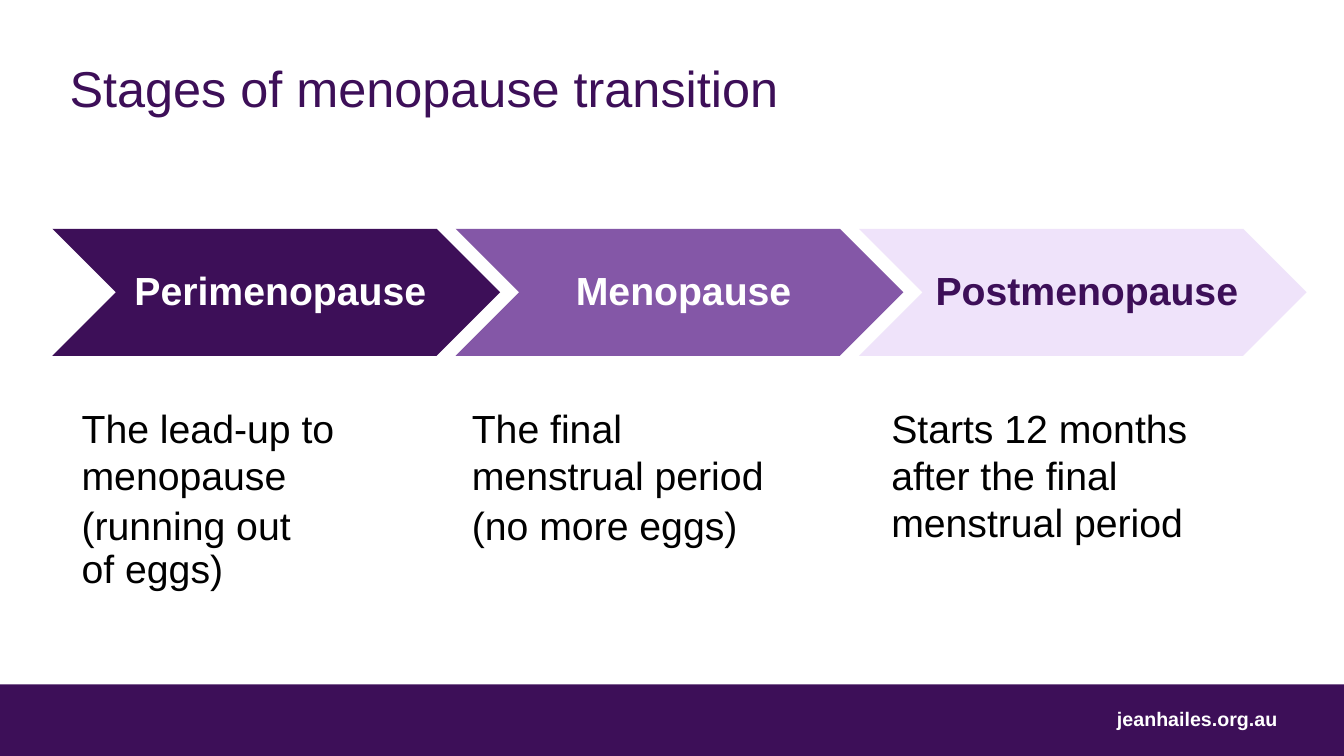
from dataclasses import dataclass

from lxml import etree
from pptx import Presentation, util as u
from pptx.dml.color import RGBColor
from pptx.enum import shapes, text
from pptx.oxml.ns import qn

# Content: each paragraph is a tuple of lines
TITLE = "Stages of menopause transition"
FOOTER = "jeanhailes.org.au"
STAGES = [
    {"name": "Perimenopause", "fill": "3D0F58", "alpha": 100, "ink": "FFFFFF",
     "left": 0.52, "width": 3.97,
     "notes": [("The lead-up to", "menopause"), ("(running out", "of eggs)")]},
    {"name": "Menopause", "fill": "662D91", "alpha": 80, "ink": "FFFFFF",
     "left": 4.39, "width": 3.97,
     "notes": [("The final", "menstrual period"), ("(no more eggs)",)]},
    {"name": "Postmenopause", "fill": "E0C9F6", "alpha": 50, "ink": "3D0F58",
     "left": 8.55, "width": 4.62,
     "notes": [("Starts 12 months", "after the final", "menstrual period")]},
]


@dataclass(frozen=True)
class Theme:
    font: str = "Arial"
    purple: str = "3D0F58"
    white: str = "FFFFFF"
    black: str = "000000"
    title: int = 36
    body: int = 28
    footer: int = 14


THEME = Theme()
WIDTH, HEIGHT = 13.33, 7.5
BAND_TOP = 6.79
CHEVRON_LEFT, CHEVRON_TOP, CHEVRON_STEP = 0.52, 2.27, 4
CHEVRON_WIDTH, CHEVRON_HEIGHT = 4.44, 1.26
NOTES_TOP, NOTES_HEIGHT = 3.97, 3.32


def inches(*values):
    return [u.Inches(value) for value in values]


def set_frame(frame, insets, anchor=text.MSO_ANCHOR.TOP, wrap=True):
    frame.word_wrap = wrap
    frame.auto_size = text.MSO_AUTO_SIZE.NONE
    frame.vertical_anchor = anchor
    (frame.margin_left, frame.margin_top,
     frame.margin_right, frame.margin_bottom) = inches(*insets)


def write(para, lines, size, color, bold=False, align=text.PP_ALIGN.LEFT):
    para.alignment = align
    for index, line in enumerate(lines):
        if index:
            para.add_line_break()
        span = para.add_run()
        span.text = line
        span.font.name = THEME.font
        span.font.size = u.Pt(size)
        span.font.bold = bold
        span.font.color.rgb = RGBColor.from_string(color)


def add_block(slide, kind, place, color, alpha=100):
    block = slide.shapes.add_shape(kind, *inches(*place))
    block.shadow.inherit = False
    block.line.fill.background()
    block.fill.solid()
    block.fill.fore_color.rgb = RGBColor.from_string(color)
    if alpha < 100:
        tint = block.fill._xPr.find(".//" + qn("a:srgbClr"))
        etree.SubElement(tint, qn("a:alpha")).set("val", str(alpha * 1000))
    return block


def add_footer(slide):
    add_block(slide, shapes.MSO_SHAPE.RECTANGLE,
              (0, BAND_TOP, WIDTH, HEIGHT - BAND_TOP), THEME.purple)
    box = slide.shapes.add_textbox(*inches(9.86, 6.96, 2.91, 0.34))
    set_frame(box.text_frame, (0.1, 0.05, 0.1, 0.05))
    write(box.text_frame.paragraphs[0], [FOOTER], THEME.footer, THEME.white,
          True, text.PP_ALIGN.RIGHT)


def add_title(slide):
    title = slide.shapes.title
    title.left, title.top, title.width, title.height = inches(0.69, 0.52, 12.09, 1.07)
    set_frame(title.text_frame, (0, 0.05, 0.1, 0.05))
    write(title.text_frame.paragraphs[0], [TITLE], THEME.title, THEME.purple)


def add_stage(slide, index, stage):
    # Chevron with the stage name
    place = (CHEVRON_LEFT + index * CHEVRON_STEP, CHEVRON_TOP,
             CHEVRON_WIDTH, CHEVRON_HEIGHT)
    chevron = add_block(slide, shapes.MSO_SHAPE.CHEVRON, place,
                        stage["fill"], stage["alpha"])
    set_frame(chevron.text_frame, (0.12, 0.04, 0.04, 0.04),
              text.MSO_ANCHOR.MIDDLE, wrap=False)
    para = chevron.text_frame.paragraphs[0]
    para.line_spacing = 0.9
    write(para, [stage["name"]], THEME.body, stage["ink"], True, text.PP_ALIGN.CENTER)

    # Description below it
    box = slide.shapes.add_textbox(
        *inches(stage["left"], NOTES_TOP, stage["width"], NOTES_HEIGHT))
    frame = box.text_frame
    set_frame(frame, (0.29, 0.04, 0.2, 0.04))
    for number, lines in enumerate(stage["notes"]):
        para = frame.add_paragraph() if number else frame.paragraphs[0]
        para.space_after = u.Pt(6)
        para.line_spacing = 0.9 if number else 1.0
        write(para, lines, THEME.body, THEME.black)


def main():
    deck = Presentation()
    deck.slide_width, deck.slide_height = inches(WIDTH, HEIGHT)
    page = deck.slides.add_slide(deck.slide_layouts[5])
    add_footer(page)
    add_title(page)
    for index, stage in enumerate(STAGES):
        add_stage(page, index, stage)
    deck.save("out.pptx")


if __name__ == "__main__":
    main()
